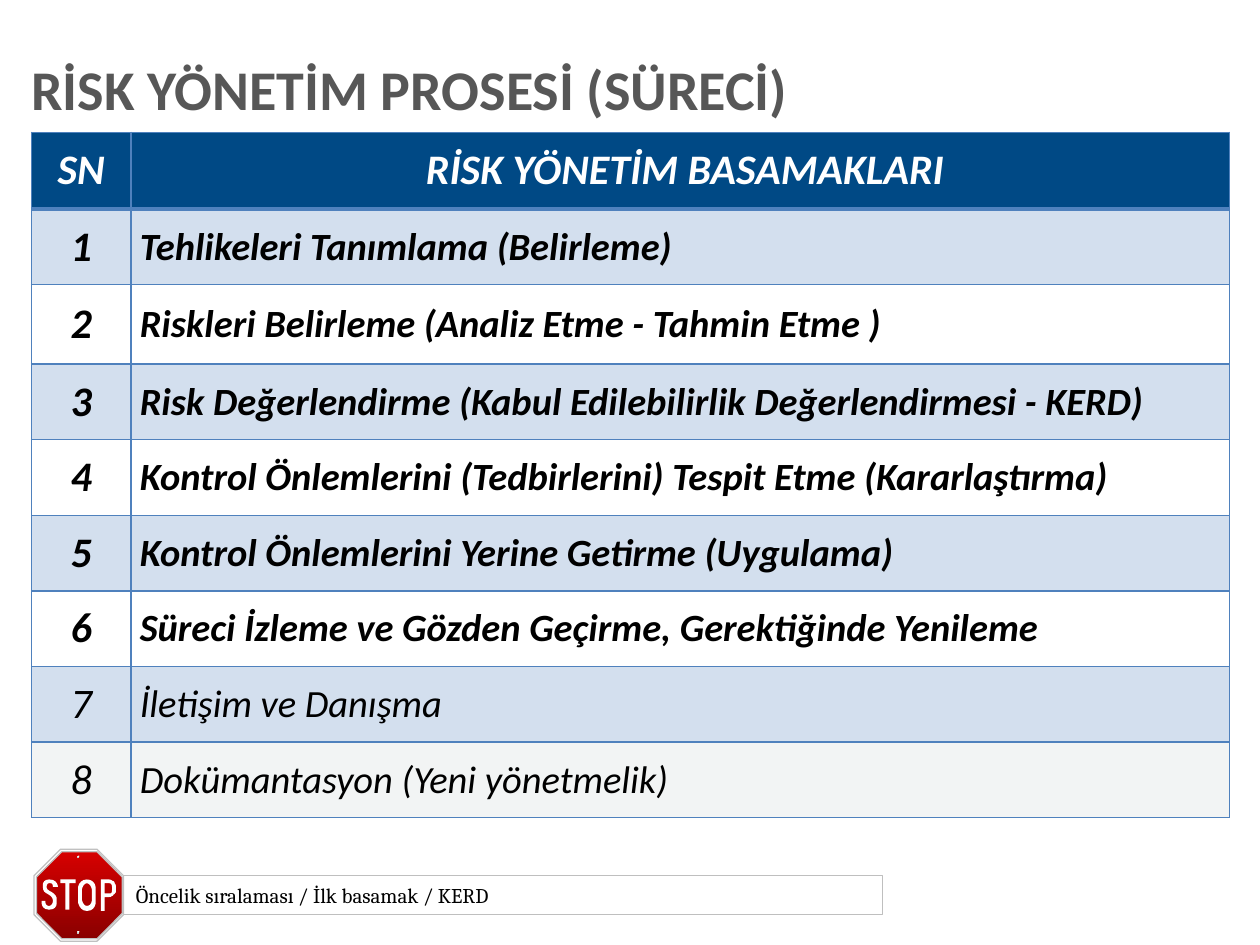
from lxml import etree
from pptx import Presentation
from pptx.dml.color import RGBColor
from pptx.enum.shapes import MSO_SHAPE
from pptx.enum.text import MSO_ANCHOR, PP_ALIGN
from pptx.oxml.ns import qn
from pptx.util import Inches, Pt

RECT, OVAL = MSO_SHAPE.RECTANGLE, MSO_SHAPE.OVAL
MIDDLE = MSO_ANCHOR.MIDDLE
LEFT, CENTER, JUSTIFY = PP_ALIGN.LEFT, PP_ALIGN.CENTER, PP_ALIGN.JUSTIFY
COLORS = {
    "white": "FFFFFF", "black": "000000", "gray": "575757",
    "navy": "004985", "band": "D3DFEE", "pale": "F2F4F4", "grid": "4F81BD",
    "rim": "C0C0C0", "frame": "BFBFBF", "light": "E4E4E4",
    "sign": "D60000", "dark": "8A0000",
}
STEPS = [
    "Tehlikeleri Tanımlama (Belirleme)",
    "Riskleri Belirleme (Analiz Etme - Tahmin Etme )",
    "Risk Değerlendirme (Kabul Edilebilirlik Değerlendirmesi - KERD)",
    "Kontrol Önlemlerini (Tedbirlerini) Tespit Etme (Kararlaştırma)",
    "Kontrol Önlemlerini Yerine Getirme (Uygulama)",
    "Süreci İzleme ve Gözden Geçirme, Gerektiğinde Yenileme",
    "İletişim ve Danışma",
    "Dokümantasyon (Yeni yönetmelik)",
]
LETTERS = {
    "T": [[(.52, 7.22), (.52, 7.01), (.48, 7.01), (.48, 6.98), (.6, 6.98),
           (.6, 7.01), (.55, 7.01), (.55, 7.22)]],
    "S": [[(.42, 7.04), (.46, 7.04), (.46, 7.04, .46, 6.98, .39, 6.98),
           (.33, 6.98, .34, 7.04, .34, 7.04), (.34, 7.09, .38, 7.09, .4, 7.11),
           (.41, 7.12, .42, 7.13, .42, 7.15), (.42, 7.18, .4, 7.19, .39, 7.19),
           (.37, 7.19, .36, 7.18, .36, 7.15), (.33, 7.15),
           (.33, 7.15, .32, 7.22, .39, 7.22), (.46, 7.22, .45, 7.16, .45, 7.15),
           (.45, 7.14, .46, 7.11, .41, 7.08), (.39, 7.07, .37, 7.06, .37, 7.04),
           (.37, 7.02, .38, 7.01, .39, 7.01), (.41, 7.01, .42, 7.01, .42, 7.04)]],
    "P": [[(.91, 7.01), (.91, 7, .9, 6.99, .89, 6.99), (.88, 6.98, .87, 6.98, .85, 6.98),
           (.8, 6.98), (.8, 7.23), (.83, 7.23), (.83, 7.12), (.85, 7.12),
           (.87, 7.12, .88, 7.12, .89, 7.11), (.89, 7.11, .9, 7.11, .9, 7.1),
           (.91, 7.1, .91, 7.09, .92, 7.08), (.92, 7.07, .92, 7.06, .92, 7.05),
           (.92, 7.03, .92, 7.02, .91, 7.01)],
          [(.88, 7.09), (.83, 7.09), (.83, 7.01), (.87, 7.01),
           (.88, 7.01, .89, 7.02, .89, 7.05), (.89, 7.05, .89, 7.09, .88, 7.09)]],
    "O": [[(.69, 6.98), (.63, 6.98, .62, 7.04, .62, 7.04), (.62, 7.16),
           (.62, 7.16, .63, 7.23, .69, 7.23), (.76, 7.23, .76, 7.16, .76, 7.16),
           (.76, 7.16, .76, 7.09, .76, 7.05), (.76, 7.01, .73, 6.98, .69, 6.98)],
          [(.73, 7.14), (.73, 7.14, .73, 7.19, .69, 7.19),
           (.66, 7.19, .65, 7.14, .65, 7.14), (.65, 7.06),
           (.65, 7.06, .66, 7.01, .69, 7.01), (.71, 7.01, .73, 7.04, .73, 7.07),
           (.73, 7.09, .73, 7.14, .73, 7.14)]],
}


def tint(name):
    return RGBColor.from_string(COLORS[name])


def write(frame, text, color, size=18, face="Calibri", bold=False, italic=False,
          align=LEFT, space=None):
    frame.word_wrap = True
    frame.vertical_anchor = MIDDLE
    para = frame.paragraphs[0]
    para.alignment = align
    para.line_spacing = space
    run = para.add_run()
    run.text = text
    font = run.font
    font.size, font.name, font.bold, font.italic = Pt(size), face, bold, italic
    font.color.rgb = tint(color)


def trace(part):
    points = [part[0]]
    for item in part[1:]:
        if len(item) == 2:
            points.append(item)
            continue
        nodes = [points[-1], item[:2], item[2:4], item[4:]]
        for step in range(1, 7):
            t = step / 6
            mix = ((1 - t) ** 3, 3 * t * (1 - t) ** 2, 3 * t * t * (1 - t), t ** 3)
            points.append(tuple(sum(m * n[axis] for m, n in zip(mix, nodes)) for axis in (0, 1)))
    return [(Inches(x), Inches(y)) for x, y in points]


class Deck:
    """Hold the style and the current slide."""

    def __init__(self):
        self.prs = Presentation()
        self.prs.slide_width, self.prs.slide_height = Inches(10), Inches(7.5)
        self.slide = self.prs.slides.add_slide(self.prs.slide_layouts[6])
        self.shapes = self.slide.shapes

    def group(self):
        self.shapes = self.slide.shapes.add_group_shape().shapes

    def text(self, box, text, color, **style):
        frame = self.shapes.add_textbox(*map(Inches, box)).text_frame
        frame.margin_left = frame.margin_right = 0
        write(frame, text, color, **style)

    def paint(self, shape, fill, line, width):
        shape.shadow.inherit = False
        if fill is None:
            shape.fill.background()
        elif isinstance(fill, tuple):
            shape.fill.gradient()
            shape.fill.gradient_angle = 270
            for stop, name, place in zip(shape.fill.gradient_stops, fill, (0, 1)):
                stop.color.rgb, stop.position = tint(name), place
        else:
            shape.fill.solid()
            shape.fill.fore_color.rgb = tint(fill)
        if line:
            shape.line.color.rgb = tint(line)
            shape.line.width = Pt(width)
        else:
            shape.line.fill.background()

    def shape(self, kind, box, fill=None, line=None, width=0.75):
        shape = self.shapes.add_shape(kind, *map(Inches, box))
        self.paint(shape, fill, line, width)
        return shape

    def outline(self, parts, fill, line=None, width=0.75):
        paths = [trace(part) for part in parts]
        pen = self.shapes.build_freeform(*paths[0][0])
        for index, points in enumerate(paths):
            if index:
                pen.move_to(*points[0])
            pen.add_line_segments(points[1:], close=True)
        self.paint(pen.convert_to_shape(), fill, line, width)

    def octagon(self, x, y, w, h, cut, fill):
        r, b = x + w, y + h
        points = [(x + cut, b), (x, b - cut), (x, y + cut), (x + cut, y),
                  (r - cut, y), (r, y + cut), (r, b - cut), (r - cut, b)]
        self.outline([points], fill, "rim")

    def border(self, cell, **widths):
        props = cell._tc.get_or_add_tcPr()
        for side in "LRTB":
            line = etree.SubElement(props, qn(f"a:ln{side}"), w=str(Pt(widths.get(side, 1))))
            solid = etree.SubElement(line, qn("a:solidFill"))
            etree.SubElement(solid, qn("a:srgbClr"), val=COLORS["grid"])

    def cell(self, cell, text, color, fill, edges, **style):
        cell.margin_left = cell.margin_right = Inches(0.07)
        cell.margin_top = cell.margin_bottom = 0
        cell.vertical_anchor = MIDDLE
        self.border(cell, **edges)
        if fill:
            cell.fill.solid()
            cell.fill.fore_color.rgb = tint(fill)
        else:
            cell.fill.background()
        write(cell.text_frame, text, color, italic=True, **style)

    def table(self, box, cols, rows, head, steps):
        grid = self.shapes.add_table(len(rows), len(cols), *map(Inches, box)).table
        for col, width in zip(grid.columns, cols):
            col.width = Inches(width)
        for row, height in zip(grid.rows, rows):
            row.height = Inches(height)
        for col, text in enumerate(head):
            self.cell(grid.cell(0, col), text, "white", "navy", {"B": 2.25},
                      size=24, bold=True, align=CENTER)
        for num, step in enumerate(steps, 1):
            fill = "band" if num % 2 else "pale" if num == len(steps) else None
            edges = {"T": 2.25} if num == 1 else {}
            look = (str(num), 24, CENTER), (step, 22, JUSTIFY if num == 1 else LEFT)
            for col, (text, size, align) in enumerate(look):
                self.cell(grid.cell(num, col), text, "black", fill, edges,
                          size=size, bold=num < 7, align=align)


def main():
    deck = Deck()
    deck.table((0.25, 1.05, 9.5, 5.42), (0.79, 8.72), [0.61, 0.6, 0.63] + [0.6] * 6,
               ("SN", " RİSK YÖNETİM BASAMAKLARI"), STEPS)
    deck.text((0.25, 0.38, 9.64, 0.71), "RİSK YÖNETİM PROSESİ (SÜRECİ)", "gray",
              size=32, bold=True, space=0.9)
    deck.group()
    deck.octagon(0.27, 6.74, 0.71, 0.73, 0.21, "white")
    deck.octagon(0.29, 6.76, 0.68, 0.69, 0.2, ("sign", "dark"))
    for parts in LETTERS.values():
        deck.outline(parts, "white")
    for y in (7.39, 6.79):
        deck.shape(OVAL, (0.61, y, 0.02, 0.02), ("light", "rim"))
        deck.shape(OVAL, (0.62, y, 0.01, 0.01), "white")
    note = deck.shape(RECT, (0.98, 6.95, 6.02, 0.31), line="frame", width=0.25)
    write(note.text_frame, "Öncelik sıralaması / İlk basamak / KERD", "black",
          size=12, face="Cambria")
    deck.prs.save("out.pptx")


if __name__ == "__main__":
    main()
